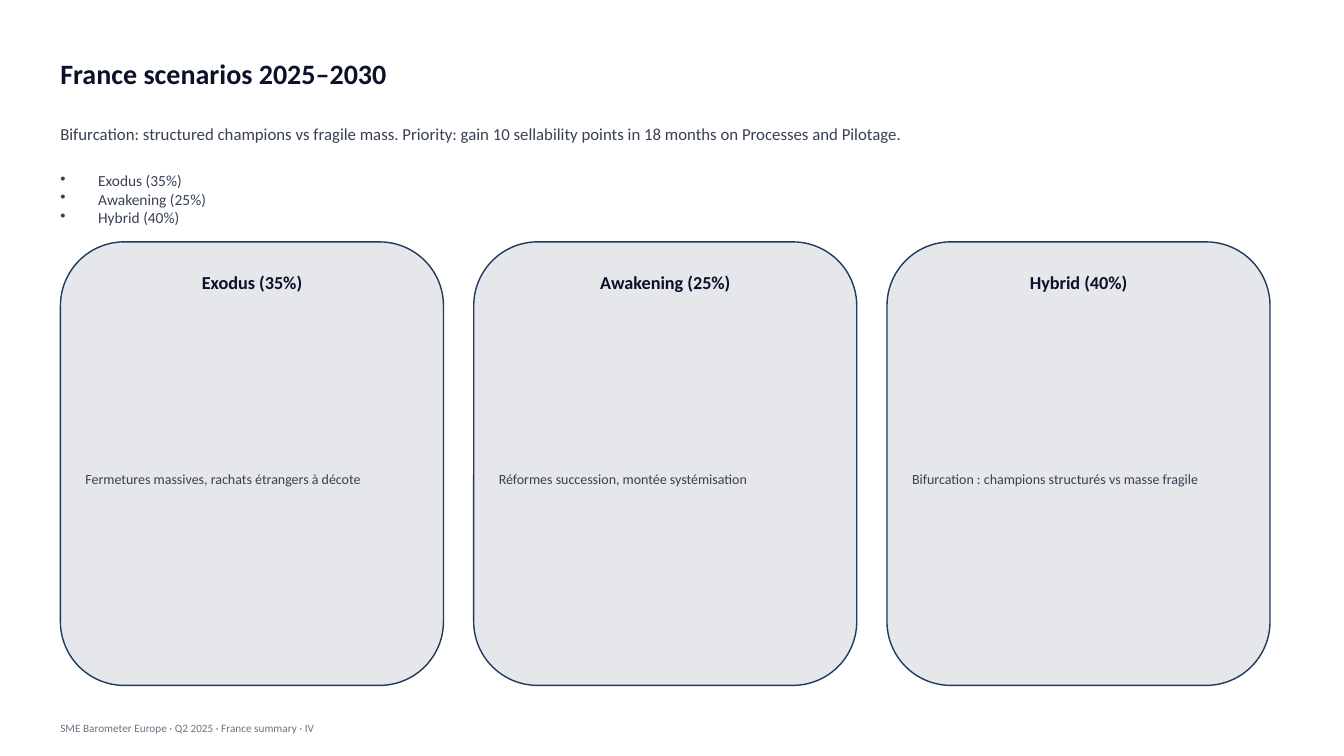
"""Build the France scenarios slide with three scenario cards."""
import pptx
import pptx.util
import pptx.dml.color
import pptx.enum.shapes
import pptx.enum.text
import pptx.oxml.ns
import lxml.etree
from dataclasses import dataclass

Pt = pptx.util.Pt
RGB = pptx.dml.color.RGBColor.from_string
Align = pptx.enum.text.PP_ALIGN


@dataclass
class Theme:
    font: str = "Calibri"
    dark: str = "0A1128"
    body: str = "374151"
    muted: str = "6B7280"
    card: str = "E5E7EB"
    edge: str = "1E3A5F"
    title: int = 20
    lead: int = 12
    list: int = 11
    head: int = 13
    note: int = 10
    foot: int = 8


theme = Theme()
deck = pptx.Presentation()
deck.slide_width, deck.slide_height = Pt(960), Pt(540)
slide = deck.slides.add_slide(deck.slide_layouts[6])


def add_text(text, left, top, width, height, size, color, bold=False, align=Align.LEFT, bullet=False):
    box = slide.shapes.add_textbox(Pt(left), Pt(top), Pt(width), Pt(height))
    frame = box.text_frame
    frame.word_wrap = True
    frame.vertical_anchor = pptx.enum.text.MSO_ANCHOR.MIDDLE
    frame.text = text
    for para in frame.paragraphs:
        para.alignment = align
        if bullet:
            props = para._p.get_or_add_pPr()
            props.set("marL", str(Pt(27)))
            props.set("indent", str(-Pt(27)))
            mark = lxml.etree.SubElement(props, pptx.oxml.ns.qn("a:buChar"))
            mark.set("char", "•")
        for run in para.runs:
            run.font.name = theme.font
            run.font.size = Pt(size)
            run.font.bold = bold
            run.font.color.rgb = RGB(color)


cards = [
    ("Exodus (35%)", "Fermetures massives, rachats étrangers à décote"),
    ("Awakening (25%)", "Réformes succession, montée systémisation"),
    ("Hybrid (40%)", "Bifurcation : champions structurés vs masse fragile"),
]
left, wide = 36, 885.6

add_text("France scenarios 2025–2030", left, 28.8, wide, 46.8, theme.title, theme.dark, bold=True)
add_text(
    "Bifurcation: structured champions vs fragile mass. "
    "Priority: gain 10 sellability points in 18 months on Processes and Pilotage.",
    left, 75.6, wide, 39.6, theme.lead, theme.body,
)
names = "\n".join(name for name, note in cards)
add_text(names, left, 111.6, wide, 61.2, theme.list, theme.body, bullet=True)

width, gap = 273.6, 21.6
for index, (name, note) in enumerate(cards):
    x = 43.2 + index * (width + gap)
    card = slide.shapes.add_shape(
        pptx.enum.shapes.MSO_SHAPE.ROUNDED_RECTANGLE, Pt(x), Pt(172.8), Pt(width), Pt(316.8)
    )
    card.shadow.inherit = False
    card.fill.solid()
    card.fill.fore_color.rgb = RGB(theme.card)
    card.line.color.rgb = RGB(theme.edge)
    card.line.width = Pt(1)
    add_text(name, x, 183.6, width, 36, theme.head, theme.dark, bold=True, align=Align.CENTER)
    add_text(note, x + 10.8, 226.8, width - gap, 230.4, theme.note, theme.body)

add_text(
    "SME Barometer Europe · Q2 2025 · France summary · IV",
    left, 507.6, wide, 25.2, theme.foot, theme.muted,
)
deck.save("out.pptx")
